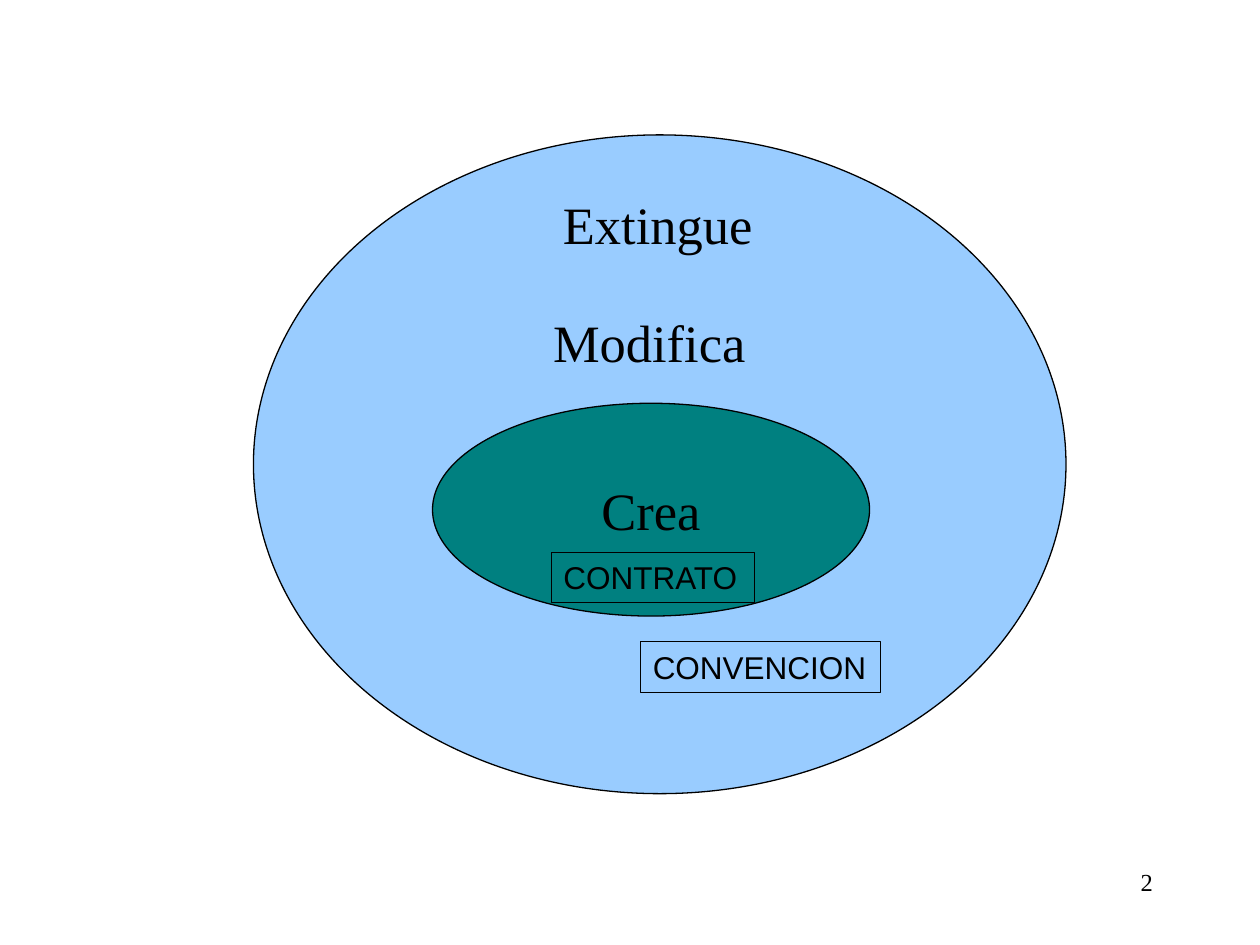
from pptx import Presentation
from pptx import util as u
from pptx.dml import color
from pptx.enum import shapes, text

COLOURS = {"outer": "99CCFF", "inner": "008080", "ink": "000000"}
SERIF = "Times New Roman"
SANS = "Arial"


def rgb(name):
    return color.RGBColor.from_string(COLOURS[name])


def write(shape, words, size=30, font=SERIF, align=text.PP_ALIGN.LEFT,
          anchor=text.MSO_ANCHOR.TOP, wrap=False, grow=False):
    frame = shape.text_frame
    frame.word_wrap = wrap
    frame.vertical_anchor = anchor
    if grow:
        frame.auto_size = text.MSO_AUTO_SIZE.SHAPE_TO_FIT_TEXT
    paragraph = frame.paragraphs[0]
    paragraph.alignment = align
    run = paragraph.add_run()
    run.text = words
    run.font.size = u.Pt(size)
    run.font.name = font
    run.font.color.rgb = rgb("ink")


def place(box, left, top, width, height):
    return box[0] + left, box[1] + top, width, height


def in_cm(box):
    return [u.Cm(length) for length in box]


def add_outline(slide, kind, box, fill=None, weight=0.75):
    shape = slide.shapes.add_shape(kind, *in_cm(box))
    shape.shadow.inherit = False
    if fill:
        shape.fill.solid()
        shape.fill.fore_color.rgb = rgb(fill)
    else:
        shape.fill.background()
    shape.line.color.rgb = rgb("ink")
    shape.line.width = u.Pt(weight)
    return shape


def add_tag(slide, box, words):
    tag = add_outline(slide, shapes.MSO_SHAPE.RECTANGLE, box, weight=0.25)
    write(tag, words, size=18, font=SANS, grow=True)


def add_contract(slide, box):
    ellipse = add_outline(slide, shapes.MSO_SHAPE.OVAL, box, fill="inner")
    write(ellipse, "Crea", align=text.PP_ALIGN.CENTER, anchor=text.MSO_ANCHOR.MIDDLE)
    add_tag(slide, place(box, 2.39, 3, 4.09, 1.02), "CONTRATO")


def add_convention(slide, box):
    add_outline(slide, shapes.MSO_SHAPE.OVAL, box, fill="outer")
    add_contract(slide, place(box, 3.61, 5.41, 8.81, 4.29))
    modifies = slide.shapes.add_textbox(*in_cm(place(box, 5.79, 3.4, 4.62, 1.52)))
    write(modifies, "Modifica", wrap=True, grow=True)
    extinguishes = slide.shapes.add_textbox(*in_cm(place(box, 5.99, 1.02, 4.34, 1.52)))
    write(extinguishes, "Extingue", grow=True)
    add_tag(slide, place(box, 7.8, 10.21, 4.83, 1.02), "CONVENCION")


def add_page_number(slide, box, number):
    shape = slide.shapes.add_textbox(*in_cm(box))
    write(shape, str(number), size=14, align=text.PP_ALIGN.RIGHT, wrap=True)


def main():
    presentation = Presentation()
    presentation.slide_width = u.Cm(25.4)
    presentation.slide_height = u.Cm(19.05)
    slide = presentation.slides.add_slide(presentation.slide_layouts[6])
    add_page_number(slide, (18.21, 17.35, 5.28, 1.27), 2)
    add_convention(slide, (5.11, 2.72, 16.38, 13.28))
    presentation.save("out.pptx")


if __name__ == "__main__":
    main()
